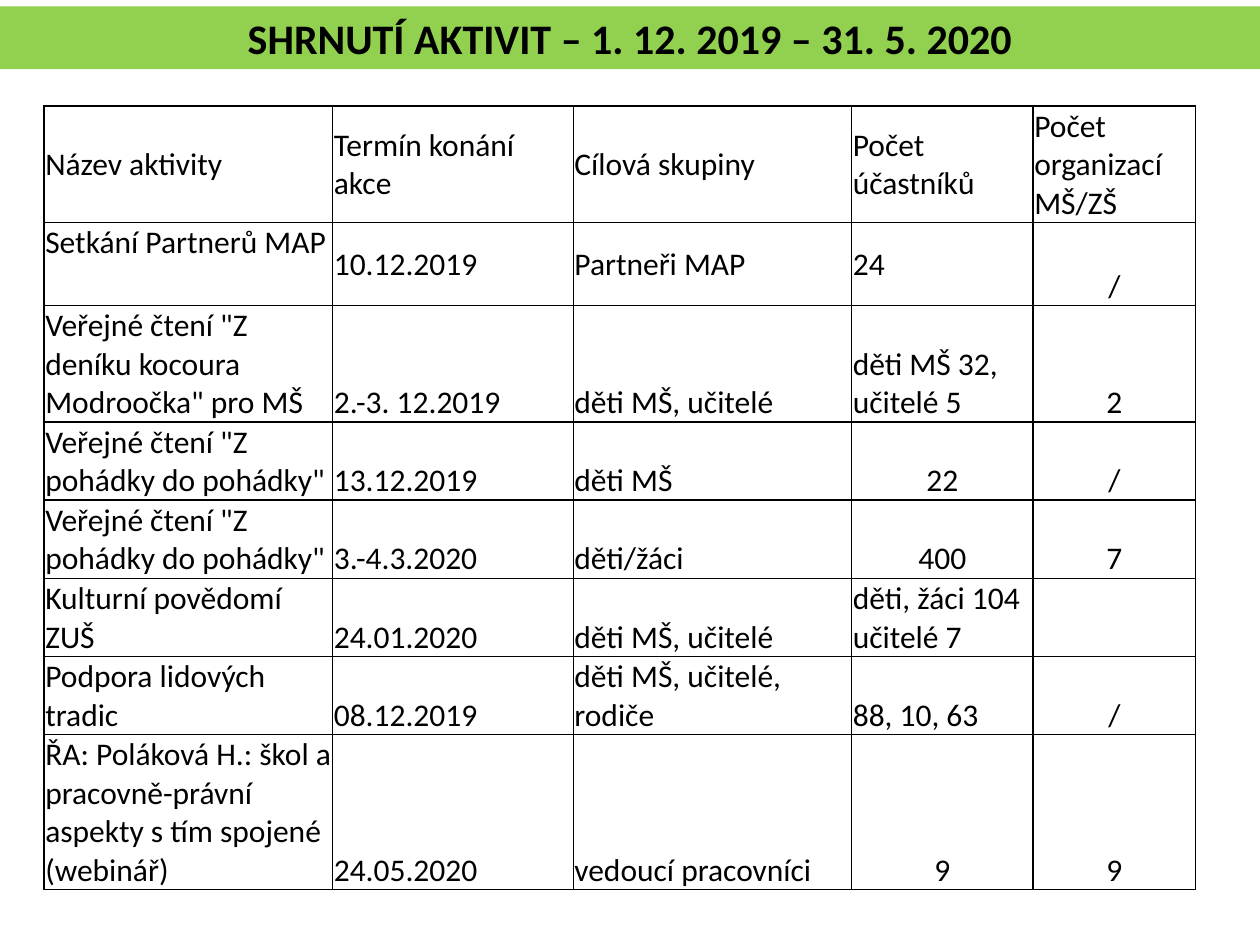
"""Build the slide that sums up the activities in one table."""
from dataclasses import dataclass

from lxml import etree
from pptx import Presentation
from pptx.dml.color import RGBColor
from pptx.enum import shapes, text
from pptx.oxml import ns
from pptx.util import Pt


@dataclass(frozen=True)
class Theme:
    font: str = "Calibri"
    ink: str = "000000"
    band: str = "92D050"
    head: int = 24
    body: int = 18
    rule: int = 1


theme = Theme()


def style(par, size, bold, align):
    par.alignment = align
    par.font.name = theme.font
    par.font.size = Pt(size)
    par.font.bold = bold
    par.font.color.rgb = RGBColor.from_string(theme.ink)


def border(cell):
    props = cell._tc.get_or_add_tcPr()
    for spot, side in enumerate(("lnL", "lnR", "lnT", "lnB")):
        line = etree.Element(ns.qn(f"a:{side}"), w=str(Pt(theme.rule)))
        fill = etree.SubElement(line, ns.qn("a:solidFill"))
        etree.SubElement(fill, ns.qn("a:srgbClr"), val=theme.ink)
        props.insert(spot, line)


deck = Presentation()
deck.slide_width, deck.slide_height = Pt(720), Pt(540)
slide = deck.slides.add_slide(deck.slide_layouts[6])

title = slide.shapes.add_shape(
    shapes.MSO_SHAPE.RECTANGLE, Pt(0), Pt(3.6), Pt(720), Pt(36))
title.shadow.inherit = False
title.fill.solid()
title.fill.fore_color.rgb = RGBColor.from_string(theme.band)
title.line.fill.background()
title.text_frame.text = "SHRNUTÍ AKTIVIT – 1. 12. 2019 – 31. 5. 2020"
title.text_frame.vertical_anchor = text.MSO_ANCHOR.MIDDLE
style(title.text_frame.paragraphs[0], theme.head, True, text.PP_ALIGN.CENTER)

widths = (164.9, 137.5, 159.1, 103.7, 92.9)
rows = (
    (65.1, "mmmmm", ("Název aktivity", "Termín konání akce", "Cílová skupiny",
                     "Počet účastníků", "Počet organizací MŠ/ZŠ")),
    (47.5, "tmmmb", ("Setkání Partnerů MAP", "10.12.2019", "Partneři MAP",
                     "24", "/")),
    (65.1, "bbbbb", ('Veřejné čtení "Z deníku kocoura Modroočka" pro MŠ',
                     "2.-3. 12.2019", "děti MŠ, učitelé",
                     "děti MŠ 32, učitelé 5", "2")),
    (43.9, "bbbbb", ('Veřejné čtení "Z pohádky do pohádky"', "13.12.2019",
                     "děti MŠ", "22", "/")),
    (43.9, "bbbbb", ('Veřejné čtení "Z pohádky do pohádky"', "3.-4.3.2020",
                     "děti/žáci", "400", "7")),
    (43.9, "bbbbb", ("Kulturní povědomí ZUŠ", "24.01.2020",
                     "děti MŠ, učitelé", "děti, žáci 104 učitelé 7", "")),
    (43.9, "bbbbb", ("Podpora lidových tradic", "08.12.2019",
                     "děti MŠ, učitelé, rodiče", "88, 10, 63", "/")),
    (87.4, "bbbbb", ("ŘA: Poláková H.: škol a pracovně-právní aspekty "
                     "s tím spojené (webinář)", "24.05.2020",
                     "vedoucí pracovníci", "9", "9")),
)
anchors = {"t": text.MSO_ANCHOR.TOP, "m": text.MSO_ANCHOR.MIDDLE,
           "b": text.MSO_ANCHOR.BOTTOM}

table = slide.shapes.add_table(
    len(rows), len(widths), Pt(25.2), Pt(60.5), Pt(sum(widths)),
    Pt(sum(row[0] for row in rows))).table
table.first_row = table.horz_banding = False
for col, width in zip(table.columns, widths):
    col.width = Pt(width)
for r, (height, spots, words) in enumerate(rows):
    table.rows[r].height = Pt(height)
    for c, (spot, word) in enumerate(zip(spots, words)):
        cell = table.cell(r, c)
        cell.text = word
        cell.fill.background()
        cell.vertical_anchor = anchors[spot]
        cell.margin_left = cell.margin_right = cell.margin_top = Pt(0.7)
        cell.margin_bottom = Pt(0)
        count = spot == "b" and (word.isdigit() or word == "/")
        align = text.PP_ALIGN.CENTER if count else text.PP_ALIGN.LEFT
        style(cell.text_frame.paragraphs[0], theme.body, False, align)
        border(cell)

deck.save("out.pptx")
